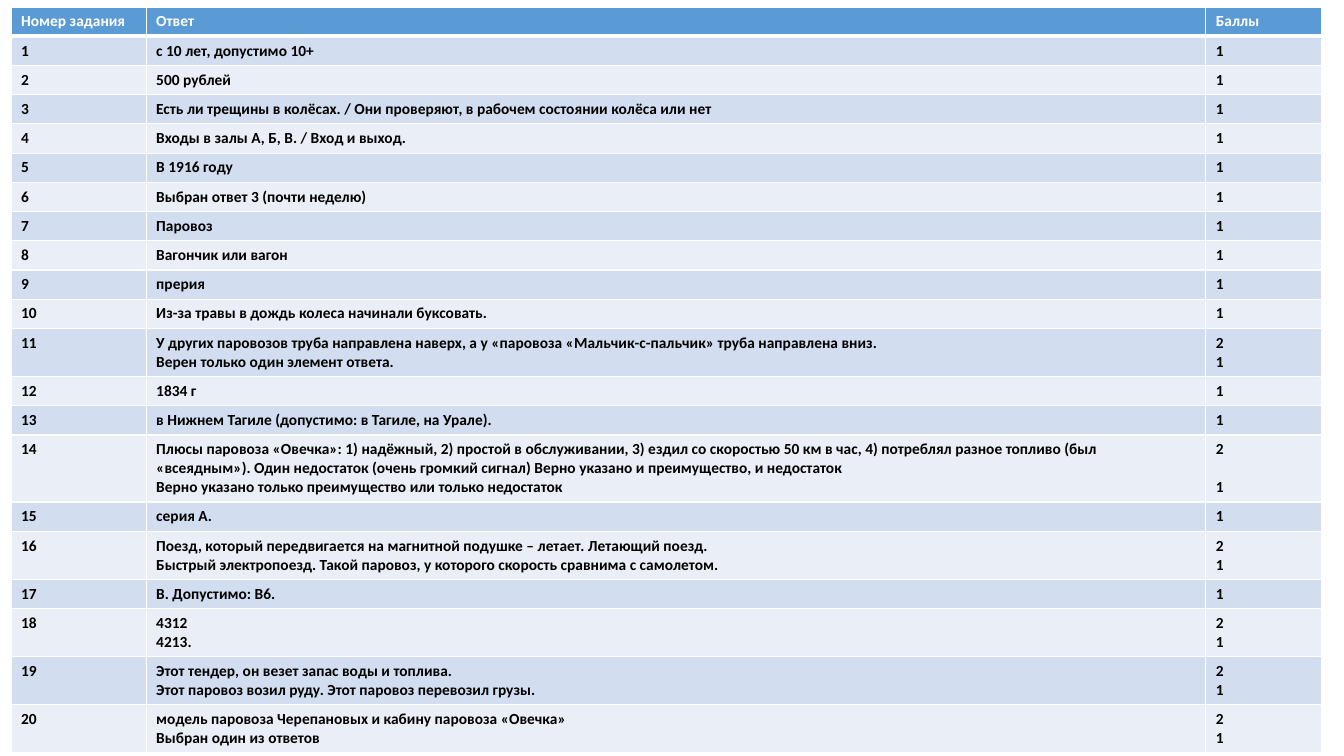
from dataclasses import dataclass

from lxml import etree
from pptx import Presentation
from pptx import util as u
from pptx.dml.color import RGBColor
from pptx.oxml.ns import qn
from pptx.table import Table, _Cell

EMU_PER_PX = 9144  # 100 px to the inch
COLORS = {"header": "5B9BD5", "odd": "D2DEEF", "even": "EAEFF7",
          "white": "FFFFFF", "black": "000000"}
COLUMN_WIDTHS = (134, 1051, 115)
ROW_HEIGHT, EXTRA_LINE = 29, 18
LINE_PT = 13.4


@dataclass
class Answer:
    lines: tuple[str, ...]
    points: tuple[str, ...] = ("1",)
    wrapped: int = 0  # extra lines taken by the first paragraph


HEADINGS = ("Номер задания", "Ответ", "Баллы")
FULL_OR_PART = ("2", "1")
ANSWERS = [
    Answer(("с 10 лет, допустимо 10+",)),
    Answer(("500 рублей",)),
    Answer(("Есть ли трещины в колёсах. / Они проверяют, в рабочем состоянии колёса или нет",)),
    Answer(("Входы в залы А, Б, В. / Вход и выход.",)),
    Answer(("В 1916 году",)),
    Answer(("Выбран ответ 3 (почти неделю)",)),
    Answer(("Паровоз",)),
    Answer(("Вагончик или вагон",)),
    Answer(("прерия",)),
    Answer(("Из-за травы в дождь колеса начинали буксовать.",)),
    Answer(("У других паровозов труба направлена наверх, а у «паровоза "
            "«Мальчик-с-пальчик» труба направлена вниз.",
            "Верен только один элемент ответа."), FULL_OR_PART),
    Answer(("1834 г",)),
    Answer(("в Нижнем Тагиле (допустимо: в Тагиле, на Урале).",)),
    Answer(("Плюсы паровоза «Овечка»: 1) надёжный, 2) простой в обслуживании, "
            "3) ездил со скоростью 50 км в час, 4) потреблял разное топливо "
            "(был «всеядным»). Один недостаток (очень громкий сигнал) "
            "Верно указано и преимущество, и недостаток",
            "Верно указано только преимущество или только недостаток"),
           FULL_OR_PART, wrapped=1),
    Answer(("серия А.",)),
    Answer(("Поезд, который передвигается на магнитной подушке – летает. Летающий поезд.",
            "Быстрый электропоезд. Такой паровоз, у которого скорость сравнима с самолетом."),
           FULL_OR_PART),
    Answer(("В. Допустимо: В6.",)),
    Answer(("4312", "4213."), FULL_OR_PART),
    Answer(("Этот тендер, он везет запас воды и топлива.",
            "Этот паровоз возил руду. Этот паровоз перевозил грузы."), FULL_OR_PART),
    Answer(("модель паровоза Черепановых и кабину паровоза «Овечка»",
            "Выбран один из ответов"), FULL_OR_PART),
]


def px(n: int) -> u.Emu:
    return u.Emu(n * EMU_PER_PX)


def set_borders(cell: _Cell, top: int, bottom: int) -> None:
    """Draw white borders; widths are in points."""
    tcPr = cell._tc.get_or_add_tcPr()
    widths = {"lnL": 1, "lnR": 1, "lnT": top, "lnB": bottom}
    for i, (side, width) in enumerate(widths.items()):
        ln = etree.Element(qn(f"a:{side}"), w=str(u.Pt(width)))
        fill = etree.SubElement(ln, qn("a:solidFill"))
        etree.SubElement(fill, qn("a:srgbClr"), val=COLORS["white"])
        tcPr.insert(i, ln)


def fill_cell(cell: _Cell, lines: tuple[str, ...], fill: str, color: str) -> None:
    cell.fill.solid()
    cell.fill.fore_color.rgb = RGBColor.from_string(COLORS[fill])
    tf = cell.text_frame
    tf.text = "\n".join(lines)
    for p in tf.paragraphs:
        p.font.name, p.font.size, p.font.bold = "Calibri", u.Pt(11), True
        p.font.color.rgb = RGBColor.from_string(COLORS[color])


def fill_answer(table: Table, number: int, answer: Answer) -> None:
    extra = len(answer.lines) - 1 + answer.wrapped
    table.rows[number].height = px(ROW_HEIGHT + EXTRA_LINE * extra)
    contents = ((str(number),), answer.lines, answer.points)
    for cell, lines in zip(table.rows[number].cells, contents):
        fill_cell(cell, lines, "odd" if number % 2 else "even", "black")
        set_borders(cell, top=3 if number == 1 else 1, bottom=1)
    # Line the last score up with the last paragraph of the answer
    if answer.wrapped:
        score = table.cell(number, 2).text_frame.paragraphs[-1]
        score.space_before = u.Pt(LINE_PT * answer.wrapped)


def main() -> None:
    prs = Presentation()
    prs.slide_width, prs.slide_height = px(1333), px(750)
    s = prs.slides.add_slide(prs.slide_layouts[6])

    # Answer table
    rows = len(ANSWERS) + 1
    table = s.shapes.add_table(rows, len(HEADINGS), px(11), px(7),
                               px(sum(COLUMN_WIDTHS)), px(ROW_HEIGHT * rows)).table
    for column, width in zip(table.columns, COLUMN_WIDTHS):
        column.width = px(width)

    # Header row
    table.rows[0].height = px(ROW_HEIGHT)
    for cell, heading in zip(table.rows[0].cells, HEADINGS):
        fill_cell(cell, (heading,), "header", "white")
        set_borders(cell, top=1, bottom=3)

    # Numbered answers
    for number, answer in enumerate(ANSWERS, start=1):
        fill_answer(table, number, answer)

    prs.save("out.pptx")


if __name__ == "__main__":
    main()
